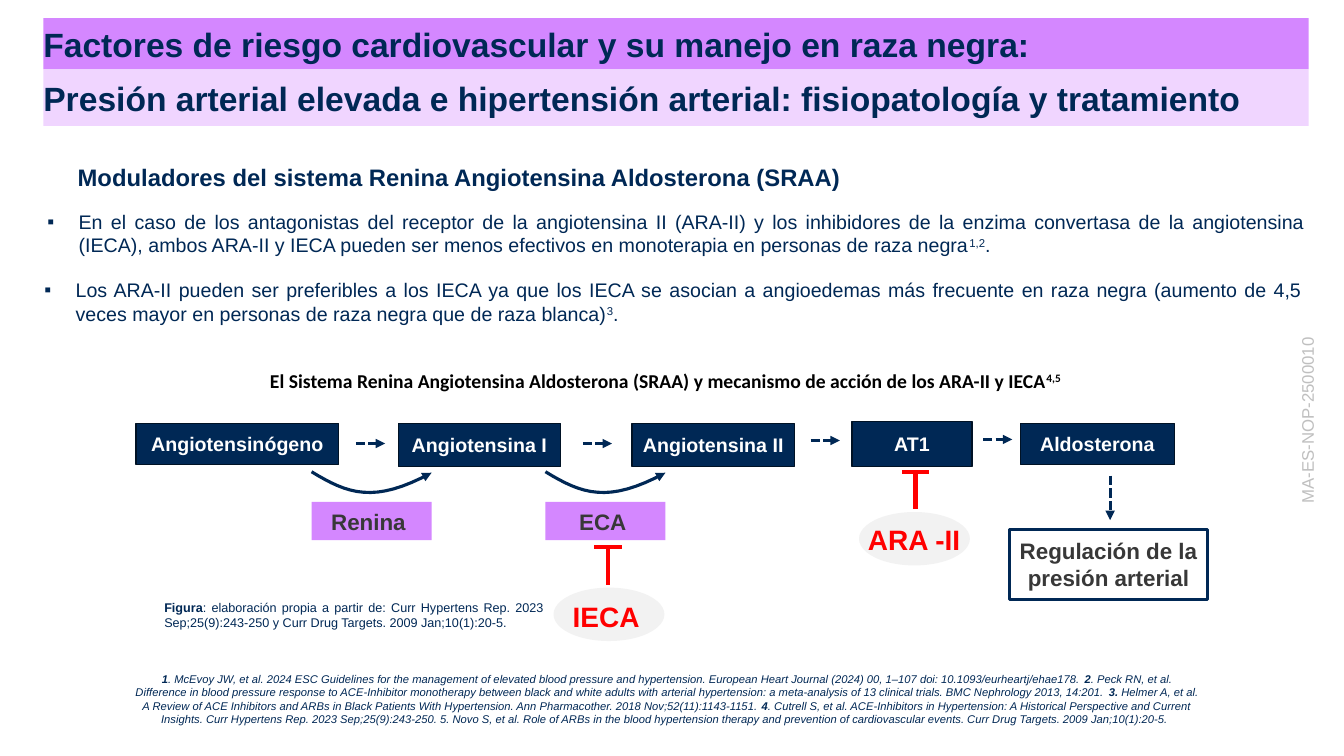
from lxml import etree
from pptx import Presentation
from pptx.dml.color import RGBColor
from pptx.enum import dml, shapes, text
from pptx.oxml.ns import qn
from pptx.util import Inches, Pt

NAVY = RGBColor(0x00, 0x28, 0x55)
DARK_NAVY = RGBColor(0x00, 0x12, 0x25)
PURPLE = RGBColor(0xD4, 0x87, 0xFF)
LILAC = RGBColor(0xF0, 0xD5, 0xFF)
PALE_GREY = RGBColor(0xF2, 0xF2, 0xF2)
CODE_GREY = RGBColor(0xBF, 0xBF, 0xBF)
CHARCOAL = RGBColor(0x38, 0x38, 0x38)
RED = RGBColor(0xFF, 0x00, 0x00)
WHITE = RGBColor(0xFF, 0xFF, 0xFF)
BLACK = RGBColor(0x00, 0x00, 0x00)

LEFT, CENTER, JUSTIFY = (text.PP_ALIGN.LEFT, text.PP_ALIGN.CENTER,
                         text.PP_ALIGN.JUSTIFY)
RECTANGLE, OVAL = shapes.MSO_SHAPE.RECTANGLE, shapes.MSO_SHAPE.OVAL

# Content: text is a list of (words, style); style "b" is bold, "s" superscript
TITLE = "Factores de riesgo cardiovascular y su manejo en raza negra:"
SUBTITLE = "Presión arterial elevada e hipertensión arterial: fisiopatología y tratamiento"
HEADING = "Moduladores del sistema Renina Angiotensina Aldosterona (SRAA)"
BULLETS = [
    ((0.47, 2.08, 12.48, 0.47), [
        ("En el caso de los antagonistas del receptor de la angiotensina II (ARA-II) y los "
         "inhibidores de la enzima convertasa de la angiotensina (IECA), ambos ARA-II y IECA "
         "pueden ser menos efectivos en monoterapia en personas de raza negra", ""),
        ("1,2", "s"), (".", "")]),
    ((0.44, 2.76, 12.48, 0.47), [
        ("Los ARA-II pueden ser preferibles a los IECA ya que los IECA se asocian a angioedemas "
         "más frecuente en raza negra (aumento de 4,5 veces mayor en personas de raza negra que "
         "de raza blanca)", ""),
        ("3", "s"), (".", "")]),
]
FIGURE_TITLE = [
    ("El Sistema Renina Angiotensina Aldosterona (SRAA) y mecanismo de acción de los "
     "ARA-II y IECA", "b"), ("4,5", "bs")]
FIGURE_SOURCE = [
    ("Figura", "b"),
    (": elaboración propia a partir de: Curr Hypertens Rep. 2023 Sep;25(9):243-250 y "
     "Curr Drug Targets. 2009 Jan;10(1):20-5.", "")]
REFERENCES = [
    ("1", "b"),
    (". McEvoy JW, et al. 2024 ESC Guidelines for the management of elevated blood pressure and "
     "hypertension. European Heart Journal (2024) 00, 1–107 doi: 10.1093/eurheartj/ehae178. ", ""),
    ("2", "b"),
    (". Peck RN, et al. Difference in blood pressure response to ACE-Inhibitor monotherapy "
     "between black and white adults with arterial hypertension: a meta-analysis of 13 clinical "
     "trials. BMC Nephrology 2013, 14:201. ", ""),
    ("3. ", "b"),
    ("Helmer A, et al. A Review of ACE Inhibitors and ARBs in Black Patients With Hypertension. "
     "Ann Pharmacother. 2018 Nov;52(11):1143-1151. ", ""),
    ("4", "b"),
    (". Cutrell S, et al. ACE-Inhibitors in Hypertension: A Historical Perspective and Current "
     "Insights. Curr Hypertens Rep. 2023 Sep;25(9):243-250. 5. Novo S, et al. Role of ARBs in the "
     "blood hypertension therapy and prevention of cardiovascular events. Curr Drug Targets. "
     "2009 Jan;10(1):20-5. ", "")]
DOCUMENT_CODE = "MA-ES-NOP-2500010"

PATHWAY = [
    ("Angiotensinógeno", (1.35, 4.2, 2.01, 0.41)),
    ("Angiotensina I", (3.95, 4.2, 1.61, 0.43)),
    ("Angiotensina II", (6.27, 4.2, 1.61, 0.43)),
    ("AT1", (8.45, 4.18, 1.19, 0.45)),
    ("Aldosterona", (10.12, 4.2, 1.53, 0.41)),
]
ENZYMES = [("Renina ", 3.09), ("ECA ", 5.41)]  # label, left edge
# label, ellipse corner, label corner, stem x, bar y
INHIBITORS = [
    ("IECA ", (5.49, 5.83), (5.45, 5.92), 6.03, 5.43),
    ("ARA -II", (8.52, 5.08), (8.47, 5.16), 9.08, 4.68),
]
STEP_ARROWS = [(3.53, 4.4), (5.78, 4.4), (8.04, 4.37), (9.75, 4.36)]
STEP_LENGTH = 0.29
OUTCOME = "Regulación de la presión arterial"

presentation = Presentation()
presentation.slide_width, presentation.slide_height = Inches(13.33), Inches(7.5)
slide = presentation.slides.add_slide(presentation.slide_layouts[5])


def write(shape, runs, size, color, align=CENTER, bold=False, italic=None,
          font="Arial", inset=(0, 0), middle=True):
    frame = shape.text_frame
    frame.word_wrap = True
    frame.auto_size = text.MSO_AUTO_SIZE.NONE
    frame.vertical_anchor = text.MSO_ANCHOR.MIDDLE if middle else text.MSO_ANCHOR.TOP
    frame.margin_left = frame.margin_right = Inches(inset[0])
    frame.margin_top = frame.margin_bottom = Inches(inset[1])
    paragraph = frame.paragraphs[0]
    paragraph.alignment = align
    for words, style in [(runs, "")] if isinstance(runs, str) else runs:
        run = paragraph.add_run()
        run.text = words
        run.font.name, run.font.size = font, Pt(size)
        run.font.bold, run.font.italic = bold or "b" in style, italic
        run.font.color.rgb = color
        if "s" in style:
            run.font._element.set("baseline", "30000")
    return paragraph


def add_box(place, fill=None, line=None, width=1, kind=RECTANGLE):
    shape = slide.shapes.add_shape(kind, *map(Inches, place))
    shape.shadow.inherit = False
    if fill is None:
        shape.fill.background()
    else:
        shape.fill.solid()
        shape.fill.fore_color.rgb = fill
    if line is None:
        shape.line.fill.background()
    else:
        shape.line.color.rgb, shape.line.width = line, Pt(width)
    return shape


def add_text(place):
    return slide.shapes.add_textbox(*map(Inches, place))


def add_arrowhead(shape):
    line = shape._element.spPr.find(qn("a:ln"))
    etree.SubElement(line, qn("a:tailEnd"), type="triangle")


def add_line(x1, y1, x2, y2, color, width, dashed_arrow=False):
    line = slide.shapes.add_connector(
        shapes.MSO_CONNECTOR.STRAIGHT, *map(Inches, (x1, y1, x2, y2)))
    line.line.color.rgb, line.line.width = color, Pt(width)
    if dashed_arrow:
        line.line.dash_style = dml.MSO_LINE.SQUARE_DOT
        add_arrowhead(line)
    etree.SubElement(line._element.spPr, qn("a:effectLst"))


def add_curved_arrow(left, top, steps=16):
    controls = [(0, 0), (0.36, 0.22), (0.62, 0.32), (1.19, 0.01)]
    points = []
    for step in range(steps + 1):
        t = step / steps
        weights = ((1 - t) ** 3, 3 * t * (1 - t) ** 2, 3 * t * t * (1 - t), t ** 3)
        x, y = (sum(w * c[axis] for w, c in zip(weights, controls)) for axis in (0, 1))
        points.append((Inches(left + x), Inches(top + y)))
    builder = slide.shapes.build_freeform(*points[0])
    builder.add_line_segments(points[1:], close=False)
    curve = builder.convert_to_shape()
    curve.shadow.inherit = False
    curve.fill.background()
    curve.line.color.rgb, curve.line.width = NAVY, Pt(2.25)
    add_arrowhead(curve)


# Title bars
title = slide.shapes.title
title.left, title.top, title.width, title.height = map(Inches, (0.43, 0.18, 12.55, 0.51))
title.fill.solid()
title.fill.fore_color.rgb = PURPLE
write(title, TITLE, 24, NAVY, LEFT, bold=True)
write(add_box((0.43, 0.69, 12.55, 0.56), LILAC), SUBTITLE, 24, NAVY, LEFT, bold=True)

# Heading and bullets
write(add_text((0.55, 1.56, 8.01, 0.39)), HEADING, 17, NAVY, bold=True,
      inset=(0.1, 0.05), middle=False)
for place, runs in BULLETS:
    paragraph = write(add_text(place), runs, 14, NAVY, JUSTIFY)
    properties = paragraph._p.get_or_add_pPr()
    properties.set("marL", str(Inches(0.31)))
    properties.set("indent", str(-Inches(0.31)))
    etree.SubElement(properties, qn("a:buFont"), typeface="Arial")
    etree.SubElement(properties, qn("a:buChar"), char="▪")

# Pathway diagram
write(add_text((2.51, 3.61, 8.18, 0.34)), FIGURE_TITLE, 14, BLACK, font="Calibri",
      inset=(0.1, 0.05), middle=False)
for label, place in PATHWAY:
    write(add_box(place, NAVY, DARK_NAVY), label, 14, WHITE, bold=True, inset=(0.05, 0.05))
for x, y in STEP_ARROWS:
    add_line(x, y, x + STEP_LENGTH, y, NAVY, 2.25, dashed_arrow=True)
for label, left in ENZYMES:
    add_curved_arrow(left, 4.68)
    write(add_box((left, 4.98, 1.19, 0.38), PURPLE), label, 16, CHARCOAL, bold=True)
for label, ellipse, corner, x, y in INHIBITORS:
    add_box((*ellipse, 1.1, 0.53), PALE_GREY, kind=OVAL)
    add_line(x, y, x, y + 0.37, RED, 3)
    add_line(x - 0.135, y, x + 0.135, y, RED, 3)
    write(add_text((*corner, 1.19, 0.38)), label, 20, RED, bold=True)
add_line(11.01, 4.72, 11.01, 5.16, NAVY, 2.25, dashed_arrow=True)
write(add_box((10.01, 5.25, 1.97, 0.7), line=NAVY, width=2.25), OUTCOME, 16, CHARCOAL,
      bold=True, inset=(0.05, 0.05))

# Sources and document code
write(add_text((1.63, 5.95, 3.76, 0.3)), FIGURE_SOURCE, 9, NAVY, JUSTIFY)
write(add_box((1.24, 6.62, 10.75, 0.64), WHITE), REFERENCES, 8, NAVY, italic=True,
      inset=(0.1, 0.05), middle=False)
code = add_text((11.58, 4.02, 2.77, 0.3))
code.rotation = 270
write(code, DOCUMENT_CODE, 12, CODE_GREY, inset=(0.1, 0.05), middle=False)

presentation.save("out.pptx")
